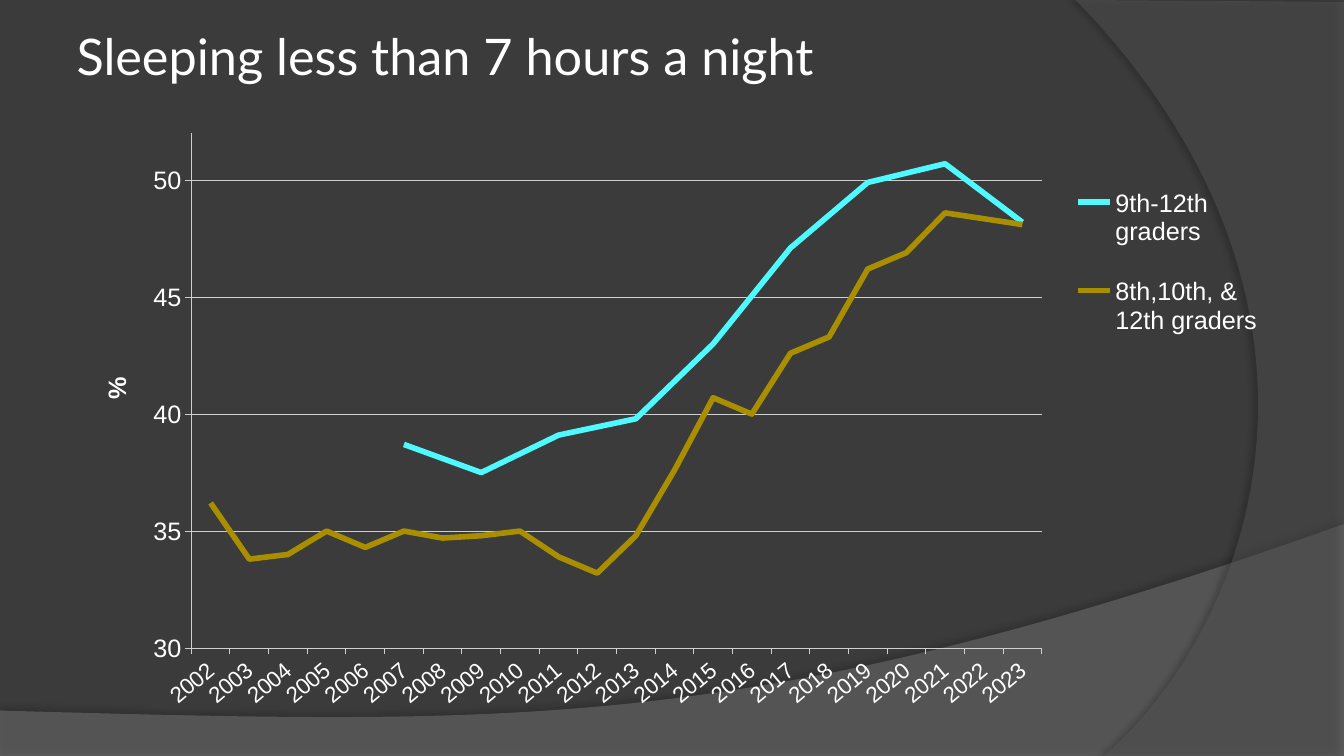
from dataclasses import dataclass

from lxml.etree import SubElement
from pptx import Presentation
from pptx.chart.axis import CategoryAxis, ValueAxis
from pptx.chart.chart import Chart
from pptx.chart.data import CategoryChartData
from pptx.dml.color import RGBColor
from pptx.enum.chart import XL_CHART_TYPE as ChartType
from pptx.enum.chart import XL_LEGEND_POSITION as LegendPosition
from pptx.enum.chart import XL_MARKER_STYLE as MarkerStyle
from pptx.enum.chart import XL_TICK_MARK as TickMark
from pptx.enum.text import MSO_ANCHOR, MSO_AUTO_SIZE, PP_ALIGN
from pptx.oxml.ns import qn
from pptx.oxml.xmlchemy import BaseOxmlElement
from pptx.slide import Slide
from pptx.text.text import Font, TextFrame
from pptx.util import Inches, Pt

BACKGROUND = RGBColor(0x3B, 0x3B, 0x3B)
WHITE = RGBColor(0xFF, 0xFF, 0xFF)
GRID = RGBColor(0xCF, 0xCF, 0xCF)
CYAN = RGBColor(0x4E, 0xF9, 0xFF)
GOLD = RGBColor(0xA9, 0x8F, 0x00)
HILL_GRAY = RGBColor(0x7F, 0x7F, 0x7F)
ARC_GRAY = RGBColor(0x5E, 0x5E, 0x5E)

CURVE_STEPS = 60
Point = tuple[float, float]


@dataclass(frozen=True)
class Wave:
    """A translucent band: straight corners, then one Bezier curve."""
    corners: list[Point]
    controls: tuple[Point, Point]
    end: Point
    color: RGBColor
    opacity: int
    shadow_opacity: int
    shadow_distance: float
    shadow_angle: int


@dataclass(frozen=True)
class SleepSeries:
    name: str
    color: RGBColor
    values: list[float | None]


WAVES = [
    Wave([(0, 7.05), (0, 7.5), (13.33, 7.5), (13.33, 5.2)],
         ((7.45, 7.29), (5.21, 7.19)), (0, 7.05), HILL_GRAY, 45, 35, 3.5, 270),
    Wave([(10.67, 0), (13.33, 0.02), (13.33, 7.5), (10.95, 7.5)],
         ((12.46, 6.19), (13.57, 3)), (10.67, 0), ARC_GRAY, 40, 45, 4, 180),
]

YEARS = [str(year) for year in range(2002, 2024)]
# The high school survey runs every second year from 2007.
BIENNIAL = dict(zip(range(2007, 2024, 2), [38.7, 37.5, 39.1, 39.8, 43, 47.1, 49.9, 50.7, 48.2]))
SERIES = [
    SleepSeries("9th-12th graders", CYAN, [BIENNIAL.get(int(year)) for year in YEARS]),
    SleepSeries("8th,10th, & 12th graders", GOLD,
                [36.2, 33.8, 34, 35, 34.3, 35, 34.7, 34.8, 35, 33.9, 33.2, 34.8, 37.6,
                 40.7, 40, 42.6, 43.3, 46.2, 46.9, 48.6, None, 48.1]),
]


def format_font(font: Font, *, size: float, name: str = "Arial", bold: bool = False) -> None:
    font.size = Pt(size)
    font.name = name
    font.bold = bold
    font.color.rgb = WHITE


def write_text(frame: TextFrame, text: str, *, size: float, name: str = "Arial",
               bold: bool = False, align: PP_ALIGN = PP_ALIGN.LEFT) -> None:
    frame.text = text
    paragraph = frame.paragraphs[0]
    paragraph.alignment = align
    format_font(paragraph.runs[0].font, size=size, name=name, bold=bold)


def bezier(start: Point, first: Point, second: Point, end: Point) -> list[Point]:
    """Points along a cubic curve, without its start."""
    points = []
    for step in range(1, CURVE_STEPS + 1):
        t = step / CURVE_STEPS
        u = 1 - t
        weights = (u**3, 3 * u * u * t, 3 * u * t * t, t**3)
        x, y = (sum(w * p[axis] for w, p in zip(weights, (start, first, second, end)))
                for axis in (0, 1))
        points.append((x, y))
    return points


def add_wave(slide: Slide, wave: Wave) -> None:
    outline = wave.corners + bezier(wave.corners[-1], *wave.controls, wave.end)
    points = [(Inches(x), Inches(y)) for x, y in outline]
    builder = slide.shapes.build_freeform(*points[0])
    builder.add_line_segments(points[1:])
    shape = builder.convert_to_shape()
    shape.fill.solid()
    shape.fill.fore_color.rgb = wave.color
    shape.line.fill.background()
    shape.shadow.inherit = False

    properties = shape.element.spPr
    fill_color = properties.find(f"{qn('a:solidFill')}/{qn('a:srgbClr')}")
    SubElement(fill_color, qn("a:alpha"), val=str(wave.opacity * 1000))
    shadow = SubElement(properties.find(qn("a:effectLst")), qn("a:outerShdw"),
                        blurRad=str(Pt(4)), dist=str(Pt(wave.shadow_distance)),
                        dir=str(wave.shadow_angle * 60000), algn="ctr", rotWithShape="0")
    shadow_color = SubElement(shadow, qn("a:srgbClr"), val="000000")
    SubElement(shadow_color, qn("a:alpha"), val=str(wave.shadow_opacity * 1000))


def add_title(slide: Slide) -> None:
    title = slide.shapes.title
    title.left, title.top = Inches(0.71), Inches(0.17)
    title.width, title.height = Inches(9.17), Inches(0.75)
    frame = title.text_frame
    frame.word_wrap = True
    frame.auto_size = MSO_AUTO_SIZE.NONE
    frame.vertical_anchor = MSO_ANCHOR.MIDDLE
    frame.margin_left = frame.margin_right = Inches(0.05)
    frame.margin_top = frame.margin_bottom = Inches(0.05)
    write_text(frame, "Sleeping less than 7 hours a night", size=36, name="Lato")


def set_layout(parent: BaseOxmlElement, index: int, *, inner: bool = False,
               **fractions: float) -> None:
    """Place a chart part by fractions (x, y, w, h) of the chart's size."""
    for old_layout in parent.findall(qn("c:layout")):
        parent.remove(old_layout)
    layout = SubElement(parent, qn("c:layout"))
    parent.insert(index, layout)
    manual = SubElement(layout, qn("c:manualLayout"))
    if inner:
        SubElement(manual, qn("c:layoutTarget"), val="inner")
    for key in ("x", "y"):
        SubElement(manual, qn(f"c:{key}Mode"), val="edge")
    for key, fraction in fractions.items():
        SubElement(manual, qn(f"c:{key}"), val=str(fraction))


def format_axis(axis: CategoryAxis | ValueAxis, size: float) -> None:
    axis.major_tick_mark = TickMark.OUTSIDE
    axis.minor_tick_mark = TickMark.NONE
    axis.format.line.color.rgb = GRID
    axis.format.line.width = Pt(0.75)
    format_font(axis.tick_labels.font, size=size)


def format_axes(chart: Chart) -> None:
    years, percent = chart.category_axis, chart.value_axis
    format_axis(years, 16)
    years.has_major_gridlines = False
    label_body = years.tick_labels.font._element.getparent().getparent().getparent()
    label_body.find(qn("a:bodyPr")).set("rot", str(-40 * 60000))

    format_axis(percent, 18)
    percent.minimum_scale, percent.maximum_scale, percent.major_unit = 30, 52, 5
    percent.tick_labels.number_format = "0"
    percent.tick_labels.number_format_is_linked = False
    percent.has_major_gridlines = True
    percent.major_gridlines.format.line.color.rgb = GRID
    percent.major_gridlines.format.line.width = Pt(0.75)
    axis_title = percent.axis_title
    write_text(axis_title.text_frame, "%", size=18, bold=True, align=PP_ALIGN.CENTER)
    axis_title.text_frame._txBody.find(qn("a:bodyPr")).set("rot", str(-90 * 60000))
    set_layout(axis_title._element, 1, x=0.02, y=0.43)


def add_sleep_chart(slide: Slide) -> None:
    data = CategoryChartData()
    data.categories = YEARS
    for sleep in SERIES:
        data.add_series(sleep.name, sleep.values)
    chart = slide.shapes.add_chart(ChartType.LINE, Inches(0.71), Inches(1.08),
                                   Inches(11.88), Inches(6.08), data).chart
    chart.has_title = False
    format_font(chart.font, size=18)
    format_axes(chart)
    for series, sleep in zip(chart.plots[0].series, SERIES):
        series.smooth = False
        series.marker.style = MarkerStyle.NONE
        series.format.line.color.rgb = sleep.color
        series.format.line.width = Pt(4)
    chart.plots[0].vary_by_categories = False

    chart.has_legend = True
    chart.legend.position = LegendPosition.RIGHT
    chart.legend.include_in_layout = False
    format_font(chart.legend.font, size=18)
    set_layout(chart.legend._element, 1, x=0.83, y=0.08, w=0.17, h=0.34)

    chart_xml = chart._chartSpace.find(qn("c:chart"))
    set_layout(chart_xml.find(qn("c:plotArea")), 0, inner=True, x=0.1, y=0.04, w=0.71, h=0.84)
    chart_xml.find(qn("c:dispBlanksAs")).set("val", "span")


def main() -> None:
    presentation = Presentation()
    presentation.slide_width, presentation.slide_height = Inches(13.33), Inches(7.5)
    slide = presentation.slides.add_slide(presentation.slide_layouts[5])
    slide.background.fill.solid()
    slide.background.fill.fore_color.rgb = BACKGROUND
    for wave in WAVES:
        add_wave(slide, wave)
    add_title(slide)
    add_sleep_chart(slide)
    presentation.save("out.pptx")


if __name__ == "__main__":
    main()
